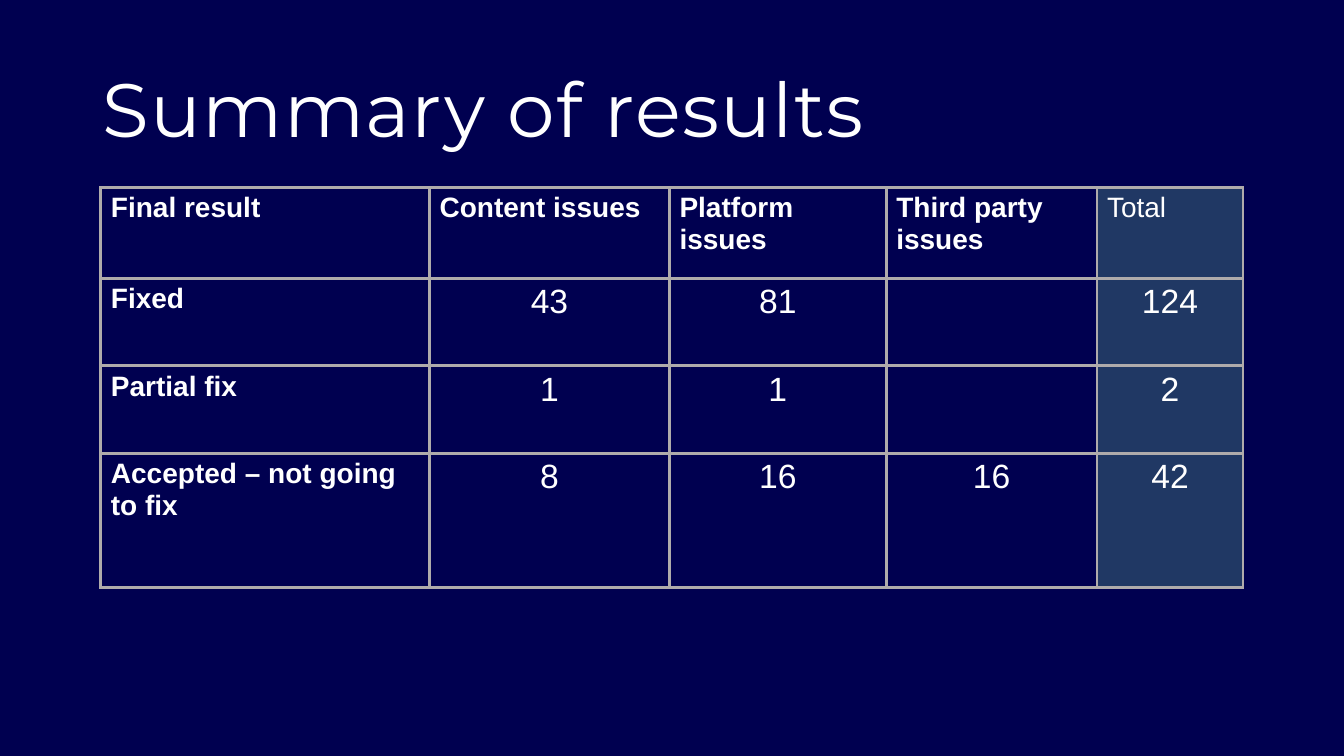
from lxml import etree
from pptx import Presentation
from pptx.dml.color import RGBColor
from pptx.enum.text import MSO_ANCHOR, PP_ALIGN
from pptx.oxml.ns import qn
from pptx.util import Inches, Pt

# Content
TITLE = "Summary of results"
ROWS = [
    ("Final result", "Content issues", "Platform issues", "Third party issues", "Total"),
    ("Fixed", "43", "81", "", "124"),
    ("Partial fix", "1", "1", "", "2"),
    ("Accepted – not going to fix", "8", "16", "16", "42"),
]
COLUMN_WIDTHS = [3.26, 2.38, 2.15, 2.09, 1.45]
ROW_HEIGHTS = [0.9, 0.87, 0.87, 1.33]

# Look
NAVY, BLUE, WHITE, GRAY = "000050", "203864", "FFFFFF", "AFABAB"
BORDER_WIDTH = Pt(2.25)


def color(value):
    return RGBColor.from_string(value)


def add_text(para, text, font, size, bold=False):
    span = para.add_run()
    span.text = text
    span.font.name = font
    span.font.size = Pt(size)
    span.font.bold = bold
    span.font.color.rgb = color(WHITE)
    return span


def add_borders(cell):
    properties = cell._tc.get_or_add_tcPr()
    for position, side in enumerate(("a:lnL", "a:lnR", "a:lnT", "a:lnB")):
        line = etree.Element(qn(side), w=str(BORDER_WIDTH))
        fill = etree.SubElement(line, qn("a:solidFill"))
        etree.SubElement(fill, qn("a:srgbClr"), val=GRAY)
        properties.insert(position, line)


# Slide
deck = Presentation()
deck.slide_width, deck.slide_height = Inches(13.33), Inches(7.5)
page = deck.slides.add_slide(deck.slide_layouts[6])
page.background.fill.solid()
page.background.fill.fore_color.rgb = color(NAVY)

# Title
box = page.shapes.add_textbox(Inches(0.92), Inches(0.4), Inches(11.5), Inches(1.45))
frame = box.text_frame
frame.word_wrap = True
frame.vertical_anchor = MSO_ANCHOR.MIDDLE
para = frame.paragraphs[0]
para.line_spacing = 0.9
heading = add_text(para, TITLE, "Montserrat", 54)
heading.font._element.set("spc", "100")

# Results table
table = page.shapes.add_table(
    len(ROWS), len(COLUMN_WIDTHS), Inches(1), Inches(1.86),
    Inches(sum(COLUMN_WIDTHS)), Inches(sum(ROW_HEIGHTS))).table
table.horz_banding = False
for column, width in zip(table.columns, COLUMN_WIDTHS):
    column.width = Inches(width)
for row, height in zip(table.rows, ROW_HEIGHTS):
    row.height = Inches(height)

last_column = len(COLUMN_WIDTHS) - 1
for row_index, values in enumerate(ROWS):
    for column_index, value in enumerate(values):
        cell = table.cell(row_index, column_index)
        is_total = column_index == last_column
        is_label = row_index == 0 or column_index == 0
        if is_total:
            cell.fill.solid()
            cell.fill.fore_color.rgb = color(BLUE)
        else:
            cell.fill.background()
        add_borders(cell)
        para = cell.text_frame.paragraphs[0]
        if not is_label:
            para.alignment = PP_ALIGN.CENTER
        if value:
            add_text(para, value, "Arial", 20 if is_label else 24, is_label and not is_total)

deck.save("out.pptx")
